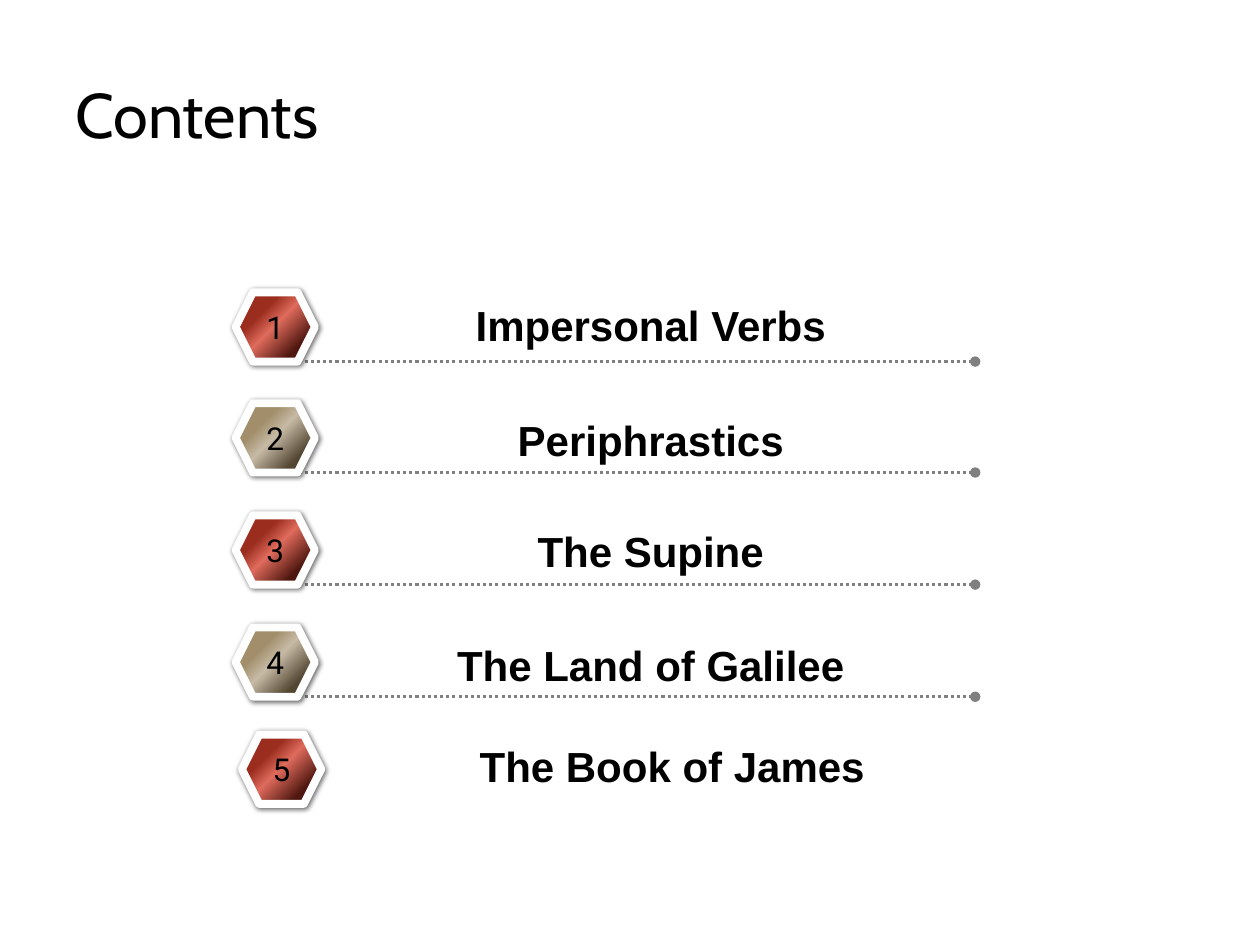
from lxml.etree import SubElement
from pptx import Presentation
from pptx.dml.color import RGBColor
from pptx.enum.dml import MSO_LINE
from pptx.enum.shapes import MSO_CONNECTOR, MSO_SHAPE
from pptx.enum.text import MSO_ANCHOR, MSO_AUTO_SIZE, PP_ALIGN
from pptx.oxml import parse_xml
from pptx.oxml.ns import nsdecls, qn
from pptx.util import Inches, Pt

COLORS = {"text": "000000", "line": "808080", "border": "FFFFFF", "shadow": "000000"}
GRADIENTS = {
    "red": ((31, "9B2D1F"), (49, "DF6C5D"), (79, "4E1710")),
    "tan": ((31, "A28E6A"), (49, "C7BBA6"), (79, "534733")),
}
COLUMNS, ROWS = 100, 75

# Number, topic, badge column, badge row, label column, label row
TOPICS = (
    (1, "Impersonal Verbs", 18.7, 23.2, 25.8, 23.3),
    (2, "Periphrastics", 18.7, 32, 25.8, 32.4),
    (3, "The Supine", 18.7, 40.9, 25.8, 41.2),
    (4, "The Land of Galilee", 18.7, 49.8, 25.8, 50.3),
    (5, "The Book of James", 19.2, 58.3, 27.5, 58.3),
)
BADGE_WIDTH, BADGE_HEIGHT = 6.3, 5.5
RULE_START, RULE_END = 23.7, 77.4


class ContentsSlide:
    """Holds the style and the slide; lengths are grid columns and rows."""

    def __init__(self, prs):
        self.column = prs.slide_width / COLUMNS
        self.row = prs.slide_height / ROWS
        self.slide = prs.slides.add_slide(prs.slide_layouts[5])

    def box(self, x, y, width, height):
        return (round(x * self.column), round(y * self.row),
                round(width * self.column), round(height * self.row))

    def set_text(self, sp, text, font, size, align, anchor, bold=False):
        tf = sp.text_frame
        tf.text = text
        tf.word_wrap = True
        tf.vertical_anchor = anchor
        p = tf.paragraphs[0]
        p.alignment = align
        r = p.runs[0]
        r.font.name = font
        r.font.size = Pt(size)
        r.font.bold = bold
        r.font.color.rgb = RGBColor.from_string(COLORS["text"])

    def title(self, text, *place):
        sp = self.slide.shapes.title
        sp.left, sp.top, sp.width, sp.height = self.box(*place)
        self.set_text(sp, text, "Cabin", 36, PP_ALIGN.LEFT, MSO_ANCHOR.BOTTOM)
        sp.text_frame.auto_size = MSO_AUTO_SIZE.NONE

    def label(self, text, *place):
        sp = self.slide.shapes.add_textbox(*self.box(*place))
        self.set_text(sp, text, "Arial", 24, PP_ALIGN.CENTER, MSO_ANCHOR.TOP, bold=True)
        sp.text_frame.auto_size = MSO_AUTO_SIZE.SHAPE_TO_FIT_TEXT

    def rule(self, start, end, y):
        """Draw a dotted line that ends in a dot."""
        left, top, width, _ = self.box(start, y, end - start, 0)
        line = self.slide.shapes.add_connector(
            MSO_CONNECTOR.STRAIGHT, left, top, left + width, top)
        line.line.color.rgb = RGBColor.from_string(COLORS["line"])
        line.line.width = Pt(1.75)
        line.line.dash_style = MSO_LINE.ROUND_DOT
        spPr = line.element.spPr
        SubElement(spPr.find(qn("a:ln")), qn("a:tailEnd"), type="oval")
        SubElement(spPr, qn("a:effectLst"))

    def badge(self, number, gradient, *place):
        """Draw a numbered hexagon with a three-stop gradient and a soft shadow."""
        sp = self.slide.shapes.add_shape(MSO_SHAPE.HEXAGON, *self.box(*place))
        sp.line.color.rgb = RGBColor.from_string(COLORS["border"])
        sp.line.width = Pt(4.5)
        stops = "".join(
            f'<a:gs pos="{pos * 1000}"><a:srgbClr val="{color}"/></a:gs>'
            for pos, color in GRADIENTS[gradient])
        spPr = sp.element.spPr
        spPr.find(qn("a:prstGeom")).addnext(parse_xml(
            f'<a:gradFill {nsdecls("a")} rotWithShape="1"><a:gsLst>{stops}</a:gsLst>'
            '<a:lin ang="2700000" scaled="0"/></a:gradFill>'))
        spPr.append(parse_xml(
            f'<a:effectLst {nsdecls("a")}><a:outerShdw blurRad="{Pt(3)}" dist="{Pt(1)}"'
            ' dir="2700000" algn="ctr" rotWithShape="0">'
            f'<a:srgbClr val="{COLORS["shadow"]}"><a:alpha val="60000"/></a:srgbClr>'
            '</a:outerShdw></a:effectLst>'))
        self.set_text(sp, str(number), "Roboto", 18, PP_ALIGN.CENTER, MSO_ANCHOR.MIDDLE)
        sp.text_frame.word_wrap = False


def main():
    prs = Presentation()
    prs.slide_width, prs.slide_height = Inches(10), Inches(7.5)
    s = ContentsSlide(prs)
    s.title("Contents", 5, 0.8, 74.2, 11.7)
    for number, topic, badge_x, badge_y, label_x, label_y in TOPICS:
        if number < len(TOPICS):
            s.rule(RULE_START, RULE_END, badge_y + BADGE_HEIGHT)
        s.badge(number, "red" if number % 2 else "tan",
                badge_x, badge_y, BADGE_WIDTH, BADGE_HEIGHT)
        s.label(topic, label_x, label_y, 51.7, 5)
    prs.save("out.pptx")


if __name__ == "__main__":
    main()
